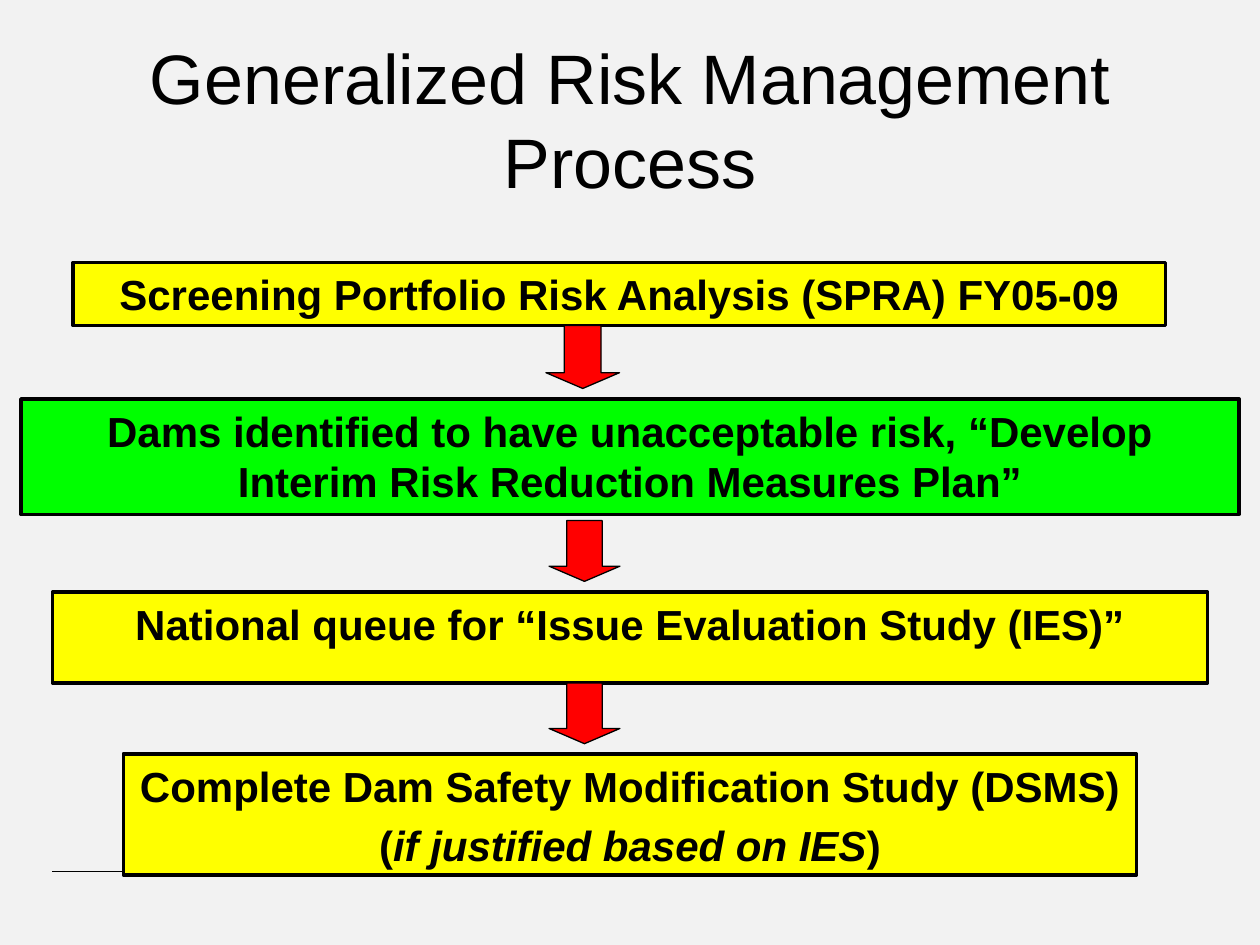
from lxml import etree
from pptx import Presentation
from pptx.dml.color import RGBColor
from pptx.enum.shapes import MSO_CONNECTOR, MSO_SHAPE as SHAPE
from pptx.enum.text import MSO_ANCHOR as ANCHOR, PP_ALIGN as ALIGN
from pptx.oxml.ns import qn
from pptx.util import Pt

BACKGROUND = RGBColor(0xF2, 0xF2, 0xF2)
BLACK = RGBColor(0, 0, 0)
YELLOW = RGBColor(0xFF, 0xFF, 0)
GREEN = RGBColor(0, 0xFF, 0)
RED = RGBColor(0xFF, 0, 0)

prs = Presentation()
prs.slide_width, prs.slide_height = Pt(720), Pt(540)
slide = prs.slides.add_slide(prs.slide_layouts[6])
slide.background.fill.solid()
slide.background.fill.fore_color.rgb = BACKGROUND


def add_outlined(kind, place, fill, line_width):
    shape = slide.shapes.add_shape(kind, *[Pt(v) for v in place])
    shape.shadow.inherit = False
    shape.fill.solid()
    shape.fill.fore_color.rgb = fill
    shape.line.color.rgb = BLACK
    shape.line.width = Pt(line_width)
    return shape


def style_text(paragraph, size, bold=False):
    paragraph.alignment = ALIGN.CENTER
    paragraph.font.name = "Arial"
    paragraph.font.size = Pt(size)
    paragraph.font.bold = bold
    paragraph.font.color.rgb = BLACK


footer_rule = slide.shapes.add_connector(
    MSO_CONNECTOR.STRAIGHT, Pt(617.8), Pt(498), Pt(30), Pt(498))
footer_rule.line.color.rgb = BLACK
footer_rule.line.width = Pt(0.75)
etree.SubElement(footer_rule._element.spPr, qn("a:effectLst"))

# Each step: place, fill, and paragraphs made of (text, italic) runs
steps = [
    ((41.75, 150, 624.25, 36), YELLOW,
     [[("Screening Portfolio Risk Analysis (SPRA) FY05-09", False)]]),
    ((12, 228, 696, 66), GREEN,
     [[("Dams identified to have unacceptable risk, “Develop Interim Risk "
        "Reduction Measures Plan”", False)]]),
    ((30, 338.25, 660, 52), YELLOW,
     [[("National queue for “Issue Evaluation Study (IES)”", False)]]),
    ((70.5, 430.75, 579, 69.25), YELLOW,
     [[("Complete Dam Safety Modification Study (DSMS)", False)],
      [("(", False), ("if justified based on IES", True), (")", False)]]),
]
for place, fill, paragraphs in steps:
    step = add_outlined(SHAPE.RECTANGLE, place, fill, 2)
    frame = step.text_frame
    frame.word_wrap = True
    frame.vertical_anchor = ANCHOR.TOP
    for i, runs in enumerate(paragraphs):
        paragraph = frame.add_paragraph() if i else frame.paragraphs[0]
        style_text(paragraph, 24, bold=True)
        if i:
            paragraph.space_before = Pt(5)
        for text, italic in runs:
            run = paragraph.add_run()
            run.text = text
            if italic:
                run.font.italic = True

for place in [(312, 186, 42, 36), (313.75, 297.5, 40.5, 34.75), (313.75, 390.25, 40.5, 34.75)]:
    arrow = add_outlined(SHAPE.DOWN_ARROW, place, RED, 0.75)
    arrow.adjustments[0] = 0.5
    arrow.adjustments[1] = 0.25

title = slide.shapes.add_textbox(Pt(36), Pt(21.5), Pt(648), Pt(92))
title.text_frame.word_wrap = True
title.text_frame.vertical_anchor = ANCHOR.MIDDLE
heading = title.text_frame.paragraphs[0]
heading.text = "Generalized Risk Management Process"
style_text(heading, 40)

prs.save("out.pptx")
